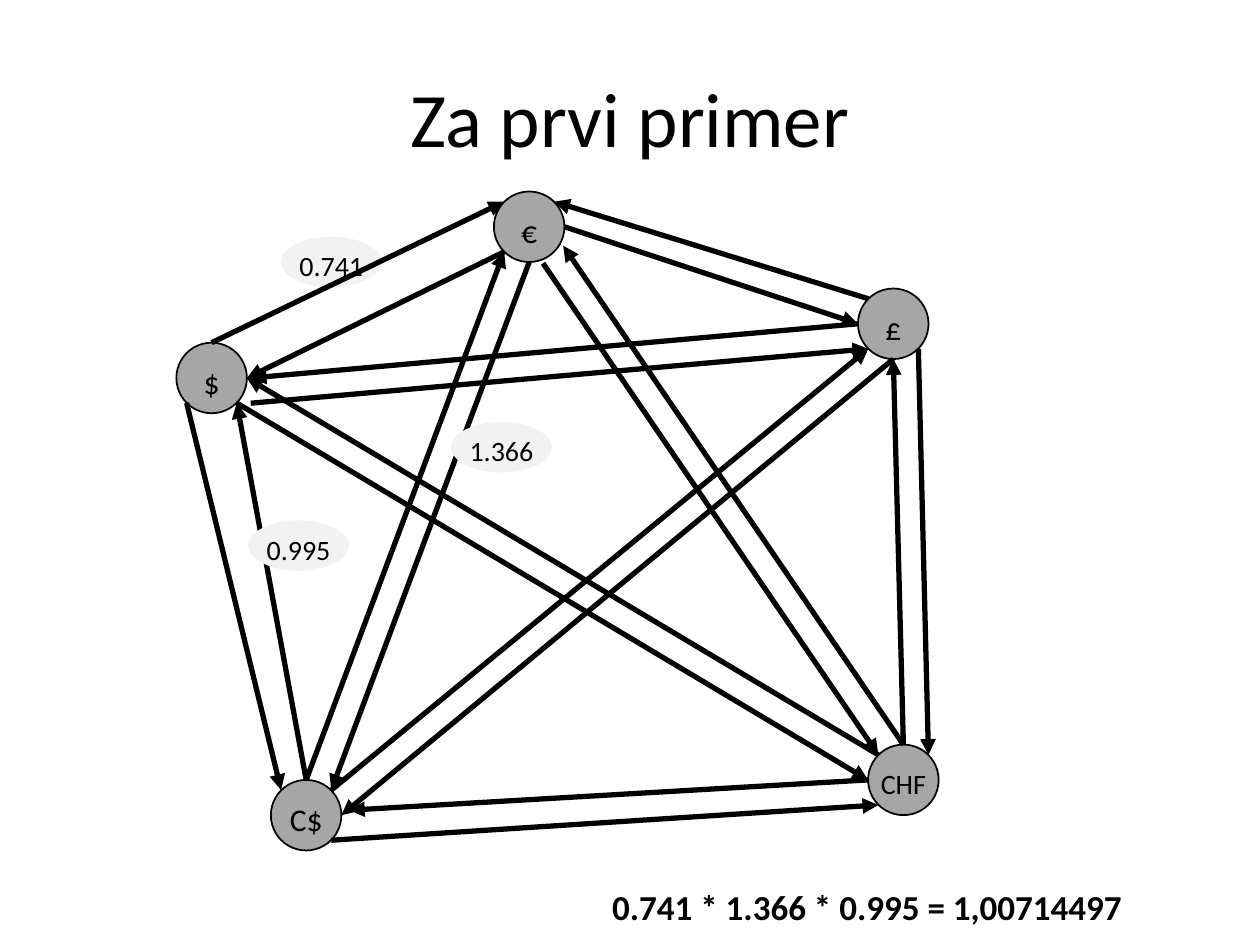
from lxml.etree import SubElement
from pptx import Presentation
from pptx.dml.color import RGBColor
from pptx.enum.shapes import MSO_CONNECTOR, MSO_SHAPE
from pptx.enum.text import MSO_ANCHOR, PP_ALIGN
from pptx.oxml.ns import qn
from pptx.util import Inches, Pt

BLACK = RGBColor(0x00, 0x00, 0x00)
GRAY = RGBColor(0xA6, 0xA6, 0xA6)
PALE = RGBColor(0xF2, 0xF2, 0xF2)
FONT = "Calibri"
COLS, ROWS = 100, 75
CELL = Inches(0.1)
RADIUS = 2.8
DIAG = 0.71

SIDES = {
    "N": (0, -1), "NE": (DIAG, -DIAG), "E": (1, 0), "SE": (DIAG, DIAG),
    "S": (0, 1), "SW": (-DIAG, DIAG), "W": (-1, 0), "NW": (-DIAG, -DIAG),
}
NODES = {
    "$": (16.8, 30, 18),
    "C$": (24.3, 64.7, 18),
    "£": (70.9, 25.7, 18),
    "€": (42, 18, 18),
    "CHF": (71.7, 61.9, 16),
}
ROUTES = [
    (("£", "NW"), ("€", "NE")),
    (("£", "SE"), ("CHF", "NE")),
    (("C$", "NE"), ("£", "SW")),
    (("£", "S"), ("C$", "E")),
    (("$", "N"), ("€", "NW")),
    (("€", "E"), ("£", "W")),
    (("€", "SW"), ("$", "E")),
    (("CHF", "N"), ("£", "S")),
    (("$", "SW"), ("C$", "NW")),
    (("C$", "N"), ("$", "SE")),
    (("C$", "N"), ("€", "SW")),
    (("€", "S"), ("C$", "NE")),
    (("CHF", "W"), (27.7, 64.3)),
    (("C$", "SE"), ("CHF", "SW")),
    (("CHF", "NW"), ("$", "E")),
    (("$", "SE"), ("CHF", "W")),
    (("CHF", "N"), (44.7, 19.5)),
    ((43.1, 20.9), ("CHF", "NW")),
    (("£", "W"), (19.9, 30)),
    ((19.9, 32), ("£", "SW")),
]
RATES = [("1.366", 39.8, 35.5), ("0.995", 23.7, 43.3)]


def grid(*cells):
    """Turn grid cells into slide lengths."""
    return [round(cell * CELL) for cell in cells]


def style(para, size, bold=False):
    """Set the font of a paragraph."""
    font = para.font
    font.name, font.size, font.bold = FONT, Pt(size), bold
    font.color.rgb = BLACK


def add_title(slide, text):
    """Place and fill the title."""
    title = slide.shapes.title
    title.left, title.top, title.width, title.height = grid(5, 3, 90, 12.5)
    title.text_frame.text = text
    title.text_frame.vertical_anchor = MSO_ANCHOR.MIDDLE
    para = title.text_frame.paragraphs[0]
    para.alignment = PP_ALIGN.CENTER
    style(para, 44)


def add_oval(slide, text, x, y, wide, high, fill, size):
    """Draw a filled oval with text, centred on a grid point."""
    box = grid(x - wide / 2, y - high / 2, wide, high)
    oval = slide.shapes.add_shape(MSO_SHAPE.OVAL, *box)
    oval.shadow.inherit = False
    oval.fill.solid()
    oval.fill.fore_color.rgb = fill
    oval.line.fill.background()
    frame = oval.text_frame
    frame.margin_left = frame.margin_right = 0
    frame.margin_top = frame.margin_bottom = 0
    frame.vertical_anchor = MSO_ANCHOR.MIDDLE
    frame.word_wrap = False
    frame.text = text
    para = frame.paragraphs[0]
    para.alignment = PP_ALIGN.CENTER
    para.line_spacing = 1.2
    style(para, size)
    return oval


def add_node(slide, name, x, y, size):
    """Draw a currency circle."""
    node = add_oval(slide, name, x, y, 2 * RADIUS, 2 * RADIUS, GRAY, size)
    node.line.color.rgb = BLACK
    node.line.width = Pt(1)


def add_rate(slide, text, x, y):
    """Draw an exchange rate label."""
    add_oval(slide, text, x, y, 8, 4, PALE, 16)


def find_point(end):
    """Give the grid point of a node side or of a free end."""
    if end[0] not in NODES:
        return end
    x, y, _ = NODES[end[0]]
    across, down = SIDES[end[1]]
    return x + RADIUS * across, y + RADIUS * down


def add_arrow(slide, start, end):
    """Draw an arrow between two ends."""
    points = grid(*find_point(start), *find_point(end))
    arrow = slide.shapes.add_connector(MSO_CONNECTOR.STRAIGHT, *points)
    arrow.line.color.rgb = BLACK
    arrow.line.width = Pt(3)
    SubElement(arrow.line._get_or_add_ln(), qn("a:tailEnd"), type="triangle")
    SubElement(arrow._element.spPr, qn("a:effectLst"))


def add_sum(slide, text):
    """Write the product of the rates."""
    frame = slide.shapes.add_textbox(*grid(47.6, 69.8, 48.9, 4.4)).text_frame
    frame.word_wrap = True
    frame.text = text
    style(frame.paragraphs[0], 20, bold=True)


def main():
    """Build the slide and save it."""
    deck = Presentation()
    deck.slide_width, deck.slide_height = grid(COLS, ROWS)
    slide = deck.slides.add_slide(deck.slide_layouts.get_by_name("Title Only"))
    add_title(slide, "Za prvi primer")
    for name, (x, y, size) in NODES.items():
        add_node(slide, name, x, y, size)
    add_rate(slide, "0.741", 26.3, 20.8)
    for start, end in ROUTES:
        add_arrow(slide, start, end)
    for rate in RATES:
        add_rate(slide, *rate)
    add_sum(slide, "0.741 * 1.366 * 0.995 = 1,00714497")
    deck.save("out.pptx")


if __name__ == "__main__":
    main()
